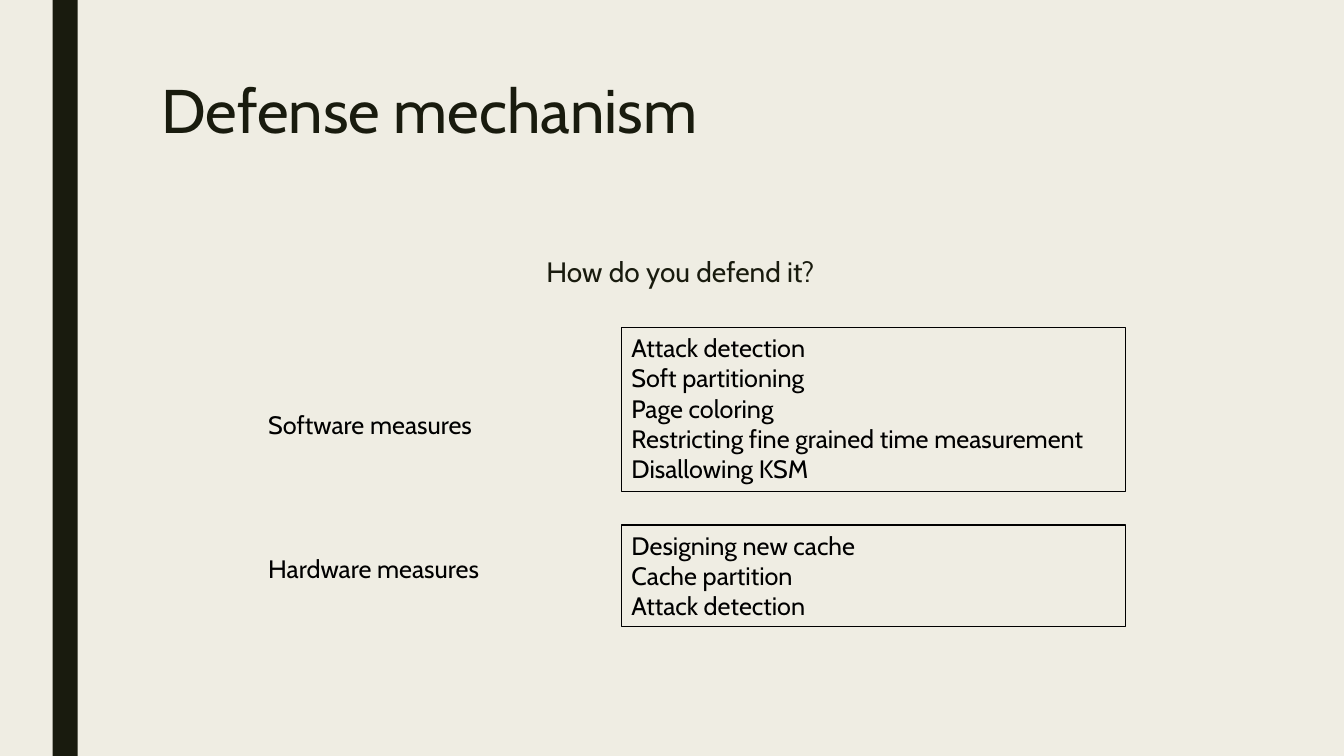
from dataclasses import dataclass

from pptx import Presentation
from pptx.dml.color import RGBColor
from pptx.enum.shapes import MSO_SHAPE
from pptx.enum.text import MSO_ANCHOR, MSO_AUTO_SIZE, PP_ALIGN
from pptx.oxml.ns import qn
from pptx.util import Inches, Pt

RECT = MSO_SHAPE.RECTANGLE
TOP = MSO_ANCHOR.TOP
LEFT, CENTER = PP_ALIGN.LEFT, PP_ALIGN.CENTER
NO_FIT, GROW = MSO_AUTO_SIZE.NONE, MSO_AUTO_SIZE.SHAPE_TO_FIT_TEXT

CELL = Inches(1 / 12)
COLS, ROWS = 160, 90


@dataclass(frozen=True)
class Theme:
    font: str = "Cabin"
    background: RGBColor = RGBColor(0xEF, 0xED, 0xE3)
    dark: RGBColor = RGBColor(0x19, 0x1B, 0x0E)
    black: RGBColor = RGBColor(0, 0, 0)
    title_size: Pt = Pt(44)
    question_size: Pt = Pt(20)
    text_size: Pt = Pt(18)
    outline: Pt = Pt(0.75)


THEME = Theme()

MEASURES = [
    ("Software measures", 48.1, 39, 19.5,
     ["Attack detection", "Soft partitioning", "Page coloring",
      "Restricting fine grained time measurement", "Disallowing KSM"]),
    ("Hardware measures", 65.3, 62.5, 12.1,
     ["Designing new cache", "Cache partition", "Attack detection"]),
]


def grid(*cells):
    return [round(c * CELL) for c in cells]


def write(s, lines, size, color, align=LEFT, fit=GROW, spacing=None):
    tf = s.text_frame
    tf.word_wrap = True
    tf.auto_size = fit
    tf.vertical_anchor = TOP
    for i, line in enumerate(lines):
        p = tf.add_paragraph() if i else tf.paragraphs[0]
        p.alignment = align
        if spacing:
            p.line_spacing = spacing
        r = p.add_run()
        r.text = line
        r.font.name = THEME.font
        r.font.size = size
        r.font.color.rgb = color


def place(ph, *cells):
    ph.left, ph.top, ph.width, ph.height = grid(*cells)


def add_title(slide, text):
    ph = slide.shapes.title
    place(ph, 18, 9, 126, 19.5)
    write(ph, [text], THEME.title_size, THEME.dark, fit=NO_FIT, spacing=0.89)


def add_question(slide, text):
    ph = slide.placeholders[1]
    place(ph, 18, 30, 126, 7.5)
    write(ph, [text], THEME.question_size, THEME.dark, CENTER, NO_FIT, 0.94)
    p = ph.text_frame.paragraphs[0]
    p.space_before, p.space_after = Pt(10), Pt(2)
    pPr = p._p.get_or_add_pPr()
    pPr.set("marL", "0")
    pPr.set("indent", "0")
    pPr.append(pPr.makeelement(qn("a:buNone"), {}))


def add_bar(slide):
    s = slide.shapes.add_shape(RECT, *grid(6.25, 0, 3, ROWS))
    s.shadow.inherit = False
    s.fill.solid()
    s.fill.fore_color.rgb = THEME.dark
    s.line.fill.background()


def add_label(slide, text, row):
    s = slide.shapes.add_textbox(*grid(30.75, row, 33.8, 4.8))
    write(s, [text], THEME.text_size, THEME.black)


def add_box(slide, lines, row, height):
    s = slide.shapes.add_shape(RECT, *grid(74, row, 60, height))
    s.shadow.inherit = False
    s.fill.background()
    s.line.color.rgb = THEME.black
    s.line.width = THEME.outline
    write(s, lines, THEME.text_size, THEME.black)


def main():
    prs = Presentation()
    prs.slide_width, prs.slide_height = grid(COLS, ROWS)
    slide = prs.slides.add_slide(prs.slide_layouts[1])
    slide.background.fill.solid()
    slide.background.fill.fore_color.rgb = THEME.background

    add_bar(slide)
    add_title(slide, "Defense mechanism")
    add_question(slide, "How do you defend it?")
    for label, label_row, box_row, box_height, lines in MEASURES:
        add_label(slide, label, label_row)
        add_box(slide, lines, box_row, box_height)
    prs.save("out.pptx")


if __name__ == "__main__":
    main()
